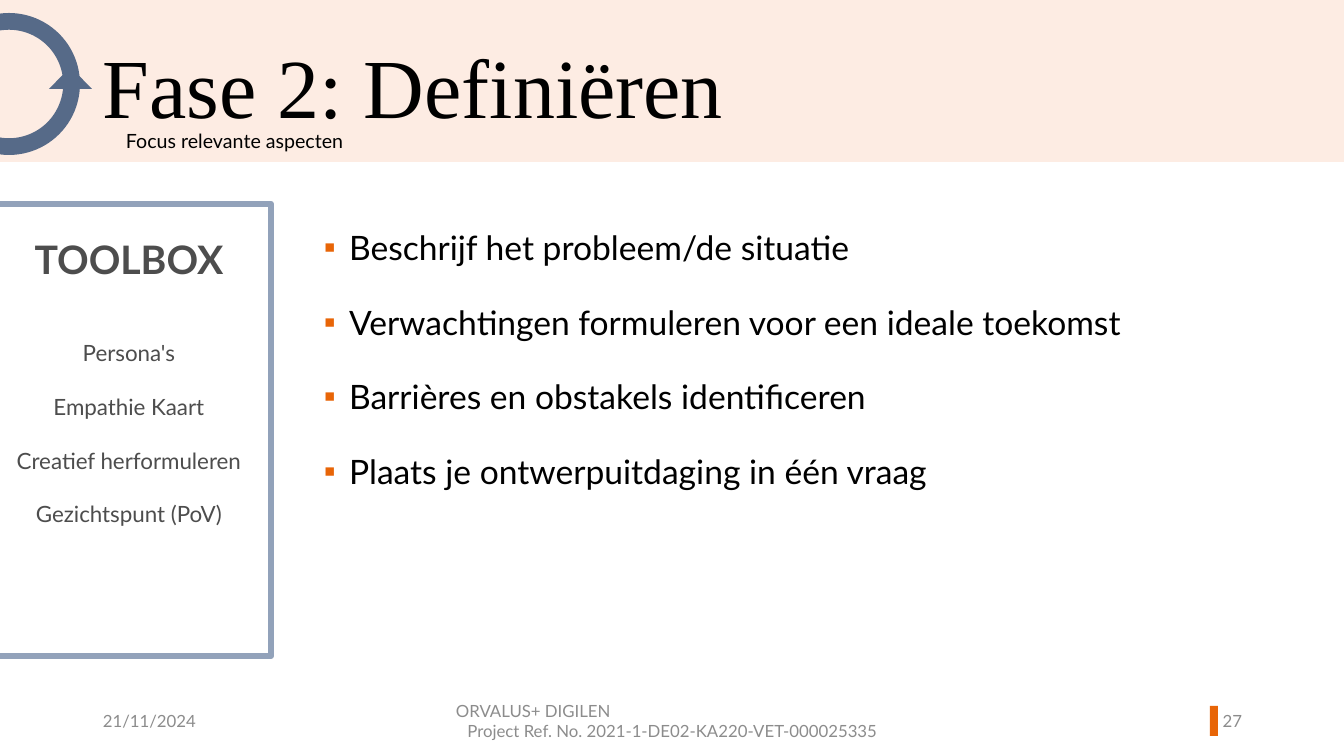
from pptx import Presentation
from pptx.dml.color import RGBColor
from pptx.enum.shapes import MSO_SHAPE as Kind
from pptx.enum.text import MSO_ANCHOR as Anchor, PP_ALIGN as Align
from pptx.oxml import parse_xml
from pptx.oxml.ns import nsdecls
from pptx.util import Emu, Pt

PX = 914400 / 100.8  # EMU in one px
THEME = {
    "band": "FDECE3", "accent": "E86507", "slate": "566A88", "frame": "92A2BA",
    "paper": "FFFFFF", "ink": "000000", "grey": "4D4D4D", "muted": "8C8C8C",
    "font": "Lato", "serif": "Times New Roman",
    "title": 60, "head": 28, "body": 24, "tool": 16, "sub": 14, "foot": 12,
}


def add_form(kind, box, fill):
    form = slide.shapes.add_shape(kind, *(Emu(round(n * PX)) for n in box))
    form.shadow.inherit = False
    form.fill.solid()
    form.fill.fore_color.rgb = RGBColor.from_string(THEME[fill])
    form.line.fill.background()
    return form


def add_text(box, lines, size, color, font="font", anchor=Anchor.TOP, align=Align.LEFT):
    """Add a wrapped text box with one paragraph per line and return its frame."""
    frame = slide.shapes.add_textbox(*(Emu(round(n * PX)) for n in box)).text_frame
    frame.word_wrap = True
    frame.vertical_anchor = anchor
    frame.text = "\n".join(lines)
    for para in frame.paragraphs:
        para.alignment = align
        face = para.runs[0].font
        face.name, face.size = THEME[font], Pt(THEME[size])
        face.color.rgb = RGBColor.from_string(THEME[color])
    return frame


deck = Presentation()
deck.slide_width, deck.slide_height = Emu(round(1344 * PX)), Emu(round(756 * PX))
slide = deck.slides.add_slide(deck.slide_layouts[6])

# Header band and page marker
add_form(Kind.RECTANGLE, (0, 0, 1344, 162), "band")
add_form(Kind.RECTANGLE, (1210, 706, 8, 30), "accent")

# Main points
points = add_text((314, 202, 938, 480), [
    "Beschrijf het probleem/de situatie",
    "Verwachtingen formuleren voor een ideale toekomst",
    "Barrières en obstakels identificeren",
    "Plaats je ontwerpuitdaging in één vraag",
], "body", "ink")
for para in points.paragraphs:
    para.line_spacing = 1.5
    para.space_before = Pt(10)
    props = para._p.get_or_add_pPr()
    props.set("marL", "228600")
    props.set("indent", "-228600")
    props.append(parse_xml(
        f'<a:buClr {nsdecls("a")}><a:srgbClr val="{THEME["accent"]}"/></a:buClr>'))
    props.append(parse_xml(f'<a:buFont {nsdecls("a")} typeface="{THEME["serif"]}"/>'))
    props.append(parse_xml(f'<a:buChar {nsdecls("a")} char="▪"/>'))

# Footer
for left, width, lines, align in [
    (93, 302, ["21/11/2024"], Align.LEFT),
    (446, 453, ["ORVALUS+ DIGILEN",
                "Project Ref. No. 2021-1-DE02-KA220-VET-000025335"], Align.CENTER),
    (1186, 66, ["27"], Align.RIGHT),
]:
    foot = add_text((left, 701, width, 40), lines, "foot", "muted",
                    anchor=Anchor.MIDDLE, align=align)
    if len(lines) > 1:
        foot.paragraphs[0].alignment = Align.LEFT

# Title and cycle sign
title = add_text((93, 41, 1001, 86), ["Fase 2: Definiëren"], "title", "ink", font="serif")
title.paragraphs[0].line_spacing = 0.9
ring = add_form(Kind.DONUT, (-62, 13, 142, 142), "slate")
ring.adjustments[0] = 0.118
add_form(Kind.ISOSCELES_TRIANGLE, (49, 67, 43, 22), "slate")

# Toolbox
tools = add_form(Kind.RECTANGLE, (-13, 204, 284, 452), "paper")
tools.line.color.rgb = RGBColor.from_string(THEME["frame"])
tools.line.width = Pt(4.5)
frame = tools.text_frame
frame.word_wrap = True
frame.vertical_anchor = Anchor.TOP
frame.margin_top = Emu(round(31 * PX))
frame.text = "\n".join(
    ["TOOLBOX", "Persona's", "Empathie Kaart", "Creatief herformuleren", "Gezichtspunt (PoV)"])
for row, para in enumerate(frame.paragraphs):
    para.alignment = Align.CENTER
    para.space_before = Pt((0, 41)[row] if row < 2 else 19.2)
    face = para.runs[0].font
    face.name, face.bold = THEME["font"], row == 0
    face.size = Pt(THEME["tool" if row else "head"])
    face.color.rgb = RGBColor.from_string(THEME["grey"])

add_text((116, 124, 391, 34), ["Focus relevante aspecten"], "sub", "ink")

deck.save("out.pptx")
